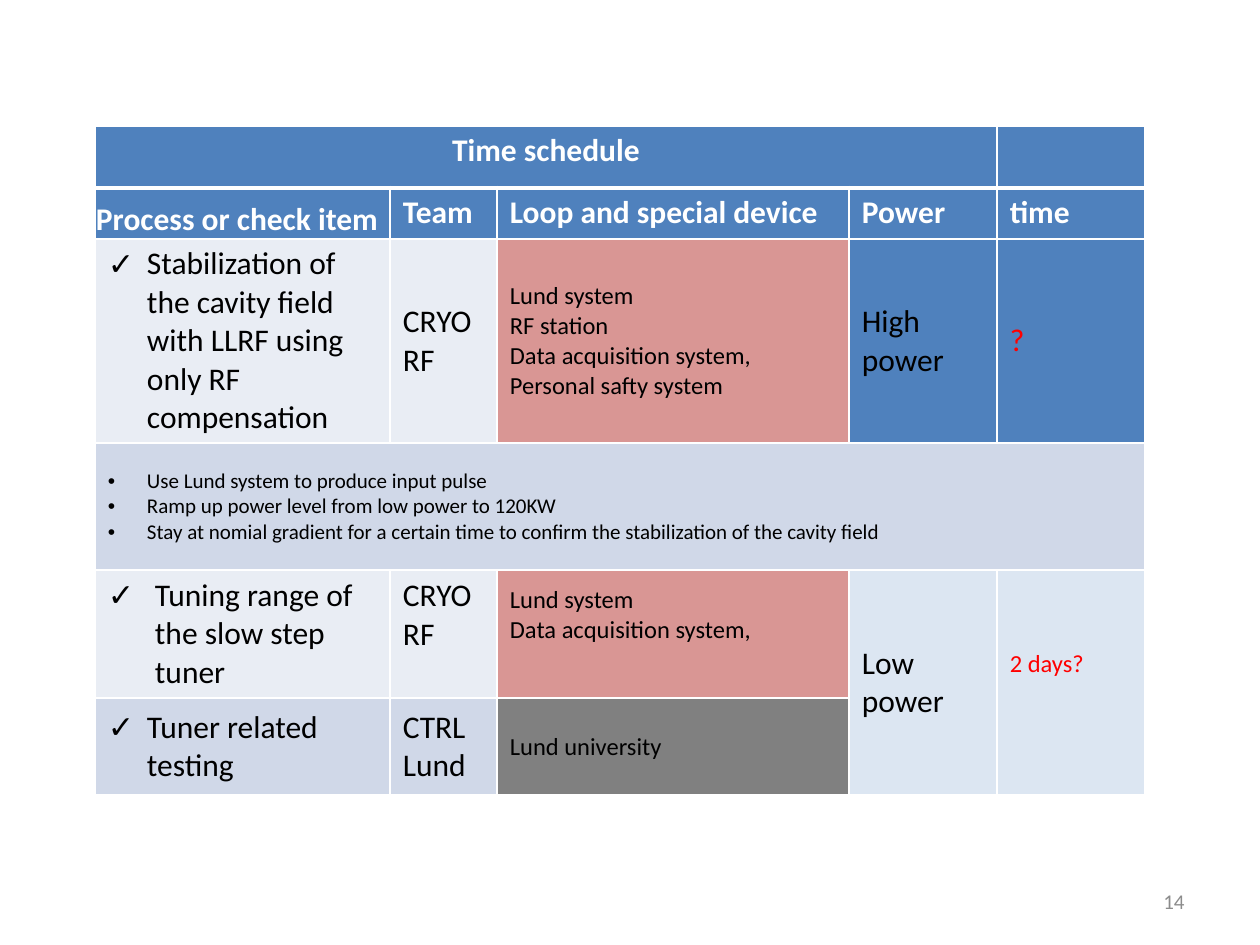
"""Build the time schedule slide with its merged table."""
import pptx
import pptx.util
import pptx.dml.color
import pptx.enum.text
import pptx.oxml.ns
from lxml import etree

SCALE = 914400 / 126
FONT = "Calibri"
COLORS = {
    "white": "FFFFFF", "black": "000000", "red": "FF0000", "gray": "808080",
    "blue": "4F81BD", "pale": "E9EDF4", "band": "D0D8E8", "rose": "D99694",
    "sky": "DCE6F2", "page": "8C8C8C",
}
COLS = [295, 107, 352, 148, 148]
ROWS = [62, 51, 204, 127, 128, 97]
MERGES = [(0, 0, 0, 3), (3, 0, 3, 4), (4, 3, 5, 3), (4, 4, 5, 4)]
ANCHOR = pptx.enum.text.MSO_ANCHOR
ALIGN = pptx.enum.text.PP_ALIGN

HEAD = {"fill": "blue", "color": "white", "bold": True, "anchor": ANCHOR.TOP}
TITLE = {**HEAD, "align": ALIGN.CENTER}
ITEM = {**HEAD, "anchor": ANCHOR.BOTTOM, "pad": (1, 1, 1, 0)}
PALE = {"fill": "pale"}
BAND = {"fill": "band"}
BLUE = {"fill": "blue"}
SKY = {"fill": "sky"}
ROSE = {"fill": "rose", "size": 14}
GRAY = {"fill": "gray", "size": 14}
CHECK = {"mark": "✓", "indent": 39}
LIFT = {"pad": (13, 6, 13, 44)}

CELLS = {
    (0, 0): (["Time schedule"], TITLE),
    (0, 4): ([""], HEAD),
    (1, 0): (["Process or check item"], ITEM),
    (1, 1): (["Team"], HEAD),
    (1, 2): (["Loop and special device"], HEAD),
    (1, 3): (["Power"], HEAD),
    (1, 4): (["time"], HEAD),
    (2, 0): (["Stabilization of the cavity field with LLRF using only RF compensation"],
             {**PALE, **CHECK}),
    (2, 1): (["CRYO", "RF"], PALE),
    (2, 2): (["Lund system", "RF station", "Data acquisition system,",
              "Personal safty system"], ROSE),
    (2, 3): (["High", "power"], BLUE),
    (2, 4): (["?"], {**BLUE, "color": "red"}),
    (3, 0): (["Use Lund system to produce input pulse",
              "Ramp up power level from low power to 120KW",
              "Stay at nomial gradient for a certain time to confirm "
              "the stabilization of the cavity field"],
             {**BAND, "size": 12, "mark": "•", "indent": 39}),
    (4, 0): (["Tuning range of the slow step tuner"],
             {**PALE, **CHECK, "indent": 47}),
    (4, 1): (["CRYO", "RF"], {**PALE, **LIFT}),
    (4, 2): (["Lund system", "Data acquisition system,"], {**ROSE, **LIFT}),
    (4, 3): (["Low", "power"], SKY),
    (4, 4): (["2 days?"], {**SKY, **LIFT, "size": 14, "color": "red"}),
    (5, 0): (["Tuner related testing"], {**BAND, **CHECK}),
    (5, 1): (["CTRL", "Lund"], BAND),
    (5, 2): (["Lund university"], GRAY),
}


def px(num):
    """Turn whole pixels into EMU."""
    return pptx.util.Emu(round(num * SCALE))


def tint(name):
    """Return the named colour."""
    return pptx.dml.color.RGBColor.from_string(COLORS[name])


def apply(item, look):
    """Set each attribute in a dict of format values."""
    for key, val in look.items():
        setattr(item, key, val)


def sub(node, tag, **attrs):
    """Append a DrawingML child."""
    return etree.SubElement(node, pptx.oxml.ns.qn("a:" + tag), attrs)


def mark(para, sign, dent):
    """Give a paragraph a hanging bullet."""
    props = para._p.get_or_add_pPr()
    props.set("marL", str(px(dent)))
    props.set("indent", str(-px(dent)))
    sub(props, "buFont", typeface="Arial")
    sub(props, "buChar", char=sign)


def write(frame, lines, look):
    """Fill a text frame with formatted paragraphs."""
    frame.text = "\n".join(lines)
    for para in frame.paragraphs:
        para.alignment = look.get("align", ALIGN.LEFT)
        apply(para.font, {
            "name": FONT,
            "size": pptx.util.Pt(look.get("size", 18)),
            "bold": look.get("bold", False),
        })
        para.font.color.rgb = tint(look.get("color", "black"))
        for run in para.runs:
            apply(run.font, {"name": FONT, "size": para.font.size,
                             "bold": para.font.bold})
            run.font.color.rgb = para.font.color.rgb
        if "mark" in look:
            mark(para, look["mark"], look["indent"])


def edge(cell, row):
    """Draw white cell borders, thicker around the title rule."""
    props = cell._tc.get_or_add_tcPr()
    thick = {(0, "lnB"), (1, "lnT")}
    for side in ("lnL", "lnR", "lnT", "lnB"):
        width = pptx.util.Pt(3 if (row, side) in thick else 1)
        line = sub(props, side, w=str(width))
        sub(sub(line, "solidFill"), "srgbClr", val=COLORS["white"])


def dress(cell, lines, look):
    """Format one table cell and write its text."""
    left, top, right, base = look.get("pad", (13, 6, 13, 6))
    apply(cell, {
        "vertical_anchor": look.get("anchor", ANCHOR.MIDDLE),
        "margin_left": px(left), "margin_top": px(top),
        "margin_right": px(right), "margin_bottom": px(base),
    })
    cell.fill.solid()
    cell.fill.fore_color.rgb = tint(look["fill"])
    write(cell.text_frame, lines, look)


def grid(slide):
    """Add the schedule table."""
    table = slide.shapes.add_table(
        len(ROWS), len(COLS), px(95), px(126), px(sum(COLS)), px(sum(ROWS))).table
    table.horz_banding = False
    for col, width in zip(table.columns, COLS):
        col.width = px(width)
    for row, height in zip(table.rows, ROWS):
        row.height = px(height)
    for top, left, base, right in MERGES:
        table.cell(top, left).merge(table.cell(base, right))
    for row in range(len(ROWS)):
        for col in range(len(COLS)):
            edge(table.cell(row, col), row)
    for (row, col), (lines, look) in CELLS.items():
        dress(table.cell(row, col), lines, look)


def number(slide):
    """Add the page number."""
    frame = slide.shapes.add_textbox(px(903), px(876), px(294), px(50)).text_frame
    apply(frame, {"word_wrap": True, "vertical_anchor": ANCHOR.MIDDLE})
    write(frame, ["14"], {"size": 12, "color": "page", "align": ALIGN.RIGHT})


def main():
    """Build and save the slide."""
    deck = pptx.Presentation()
    apply(deck, {"slide_width": px(1260), "slide_height": px(945)})
    slide = deck.slides.add_slide(deck.slide_layouts[6])
    grid(slide)
    number(slide)
    deck.save("out.pptx")


if __name__ == "__main__":
    main()
